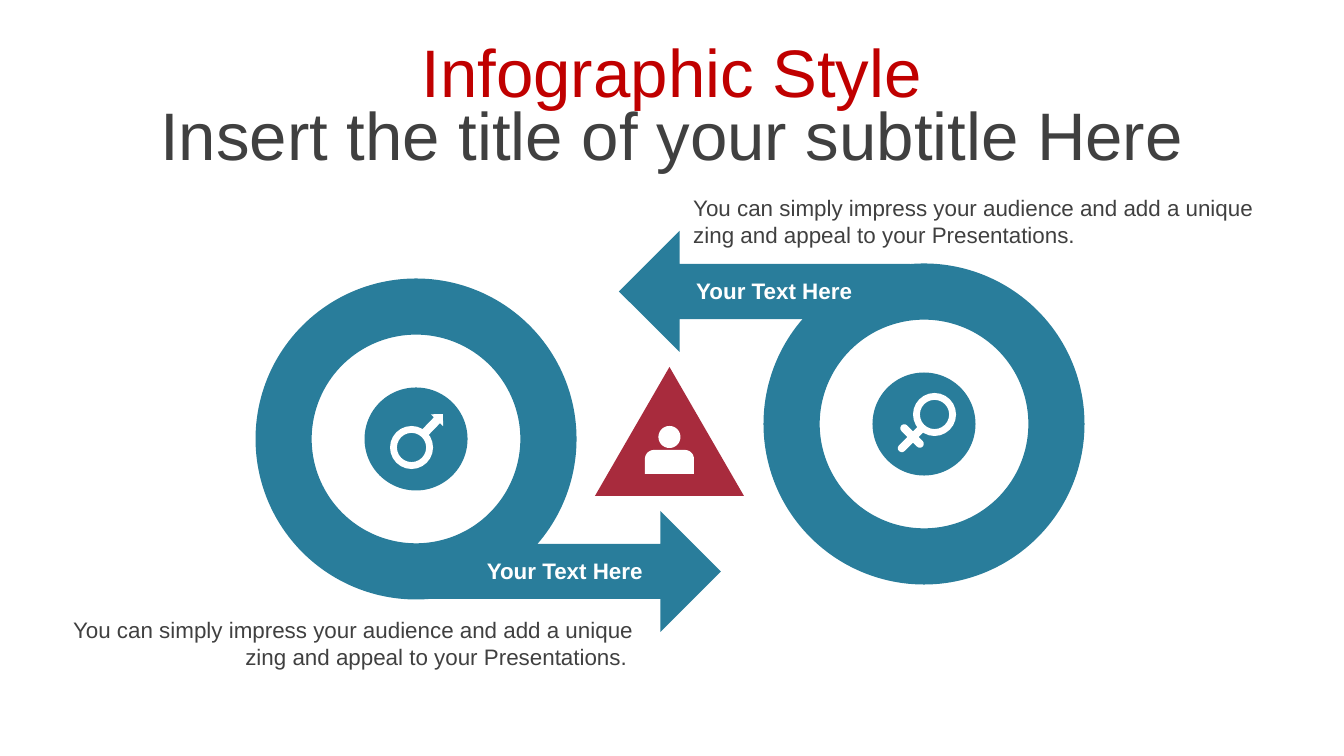
import math

from pptx import Presentation
from pptx.dml.color import RGBColor
from pptx.enum.shapes import MSO_SHAPE
from pptx.enum.text import MSO_ANCHOR, PP_ALIGN
from pptx.util import Emu, Pt

DONUT, ELLIPSE = MSO_SHAPE.DONUT, MSO_SHAPE.OVAL
RIGHT_ARROW, UP_ARROW = MSO_SHAPE.RIGHT_ARROW, MSO_SHAPE.UP_ARROW
TRIANGLE, ROUNDED = MSO_SHAPE.ISOSCELES_TRIANGLE, MSO_SHAPE.ROUNDED_RECTANGLE
LEFT, CENTER, RIGHT = PP_ALIGN.LEFT, PP_ALIGN.CENTER, PP_ALIGN.RIGHT
TOP, MIDDLE = MSO_ANCHOR.TOP, MSO_ANCHOR.MIDDLE

PX = 914400 / 134.4
TEAL, CRIMSON, WHITE = "297D9B", "A82B3D", "FFFFFF"
RED, GRAY = "C00000", "404040"

# Content: text, box in px (left, top, width, height), format
TITLES = [
    ("Infographic Style", (0, 28, 1344, 85), RED),
    ("Insert the title of your subtitle Here", (0, 113, 1344, 42), GRAY),
]
BODY = ("You can simply impress your audience and add a unique "
        "zing and appeal to your Presentations.")
LABEL = "Your Text Here"
TEXTS = [
    (BODY, (680, 188, 593, 67), dict(align=LEFT, color=GRAY)),
    (BODY + " ", (54, 610, 593, 67), dict(align=RIGHT, color=GRAY)),
    (LABEL, (312, 551, 344, 40), dict(align=RIGHT, color=WHITE, bold=True)),
    (LABEL, (683, 271, 344, 40), dict(align=LEFT, color=WHITE, bold=True)),
]

# Each loop: ring centre, arrow position, rotation
RING, HUB, ARROW = 321, 103, (291, 121)
LOOPS = [
    ((416, 439), (430, 511), 0),
    ((924, 424), (619, 231), 180),
]

# Symbol parts: kind, box in px, rotation, adjustments
MALE = [
    (DONUT, (390, 426, 43, 43), 0, [0.16]),
    (UP_ARROW, (424, 410, 17, 30), 44, []),
]
FEMALE = [
    (DONUT, (913, 393, 43, 43), 0, [0.16]),
    (ROUNDED, (907, 422, 8, 34), 45, [0.5]),
    (ROUNDED, (908, 421, 8, 30), 135, [0.5]),
]


def px(value):
    return Emu(round(value * PX))


def rgb(color):
    return RGBColor.from_string(color)


def paint(shape, color):
    shape.shadow.inherit = False
    shape.fill.solid()
    shape.fill.fore_color.rgb = rgb(color)
    shape.line.fill.background()


def add_part(parent, kind, box, color, rotation=0, adjustments=()):
    shape = parent.shapes.add_shape(kind, *map(px, box))
    paint(shape, color)
    shape.rotation = rotation
    for index, value in enumerate(adjustments):
        shape.adjustments[index] = value


def add_text(page, text, box, color, align=LEFT, size=12, bold=False,
             anchor=TOP, before=0):
    frame = page.shapes.add_textbox(*map(px, box)).text_frame
    frame.word_wrap = True
    frame.vertical_anchor = anchor
    para = frame.paragraphs[0]
    para.alignment = align
    para.space_before = Pt(before)
    span = para.add_run()
    span.text = text
    span.font.name = "Arial"
    span.font.size = Pt(size)
    span.font.bold = bold
    span.font.color.rgb = rgb(color)


def arc(center_x, center_y, radius, start, end):
    angles = [math.radians(angle) for angle in range(start, end + 1, 6)]
    return [(px(center_x + radius * math.cos(angle)),
             px(center_y + radius * math.sin(angle))) for angle in angles]


def add_person(page, left, right, top, bottom, corner, head_y, head_radius):
    shoulders = (arc(left + corner, top + corner, corner, 180, 270)
                 + arc(right - corner, top + corner, corner, 270, 360))
    body = shoulders + [(px(right), px(bottom)), (px(left), px(bottom))]
    head = arc((left + right) / 2, head_y, head_radius, 0, 360)
    builder = page.shapes.build_freeform(*body[0])
    builder.add_line_segments(body[1:], close=True)
    builder.move_to(*head[0])
    builder.add_line_segments(head[1:], close=True)
    paint(builder.convert_to_shape(), WHITE)


def centered(center, size):
    return center[0] - size / 2, center[1] - size / 2, size, size


deck = Presentation()
deck.slide_width, deck.slide_height = px(1344), px(756)
page = deck.slides.add_slide(deck.slide_layouts[6])

# Titles
for text, box, color in TITLES:
    add_text(page, text, box, color, align=CENTER, size=36, anchor=MIDDLE,
             before=7.2)

# Rings with their arrows and hubs
for center, arrow_corner, rotation in LOOPS:
    group = page.shapes.add_group_shape()
    add_part(group, DONUT, centered(center, RING), TEAL, rotation, [0.175])
    add_part(group, RIGHT_ARROW, arrow_corner + ARROW, TEAL, rotation,
             [0.455, 0.5])
    add_part(group, ELLIPSE, centered(center, HUB), TEAL)

# Triangle with person
add_part(page, TRIANGLE, (595, 367, 149, 129), CRIMSON)
add_person(page, left=645, right=694, top=450, bottom=474, corner=9,
           head_y=437, head_radius=11)

# Symbols on the hubs
for symbol in (MALE, FEMALE):
    group = page.shapes.add_group_shape()
    for kind, box, rotation, adjustments in symbol:
        add_part(group, kind, box, WHITE, rotation, adjustments)

# Descriptions and arrow labels
for text, box, style in TEXTS:
    add_text(page, text, box, **style)

deck.save("out.pptx")
